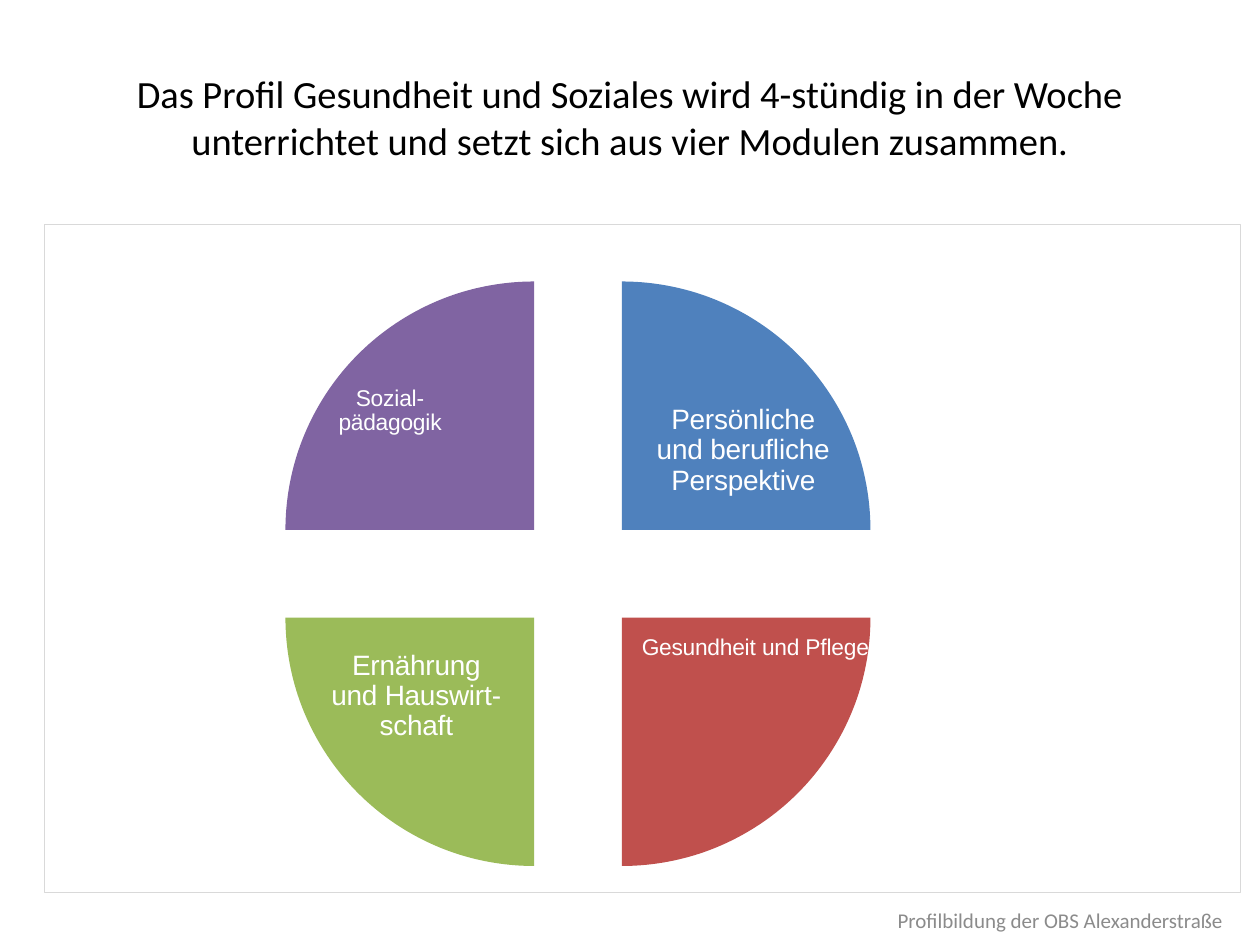
"""Build the slide about the four modules of the profile Gesundheit und Soziales."""
from dataclasses import dataclass

from lxml import etree
from pptx import Presentation
from pptx.chart.data import CategoryChartData
from pptx.dml.color import RGBColor
from pptx.enum.chart import XL_CHART_TYPE, XL_LABEL_POSITION
from pptx.enum.text import MSO_ANCHOR, PP_ALIGN
from pptx.oxml import parse_xml
from pptx.oxml.ns import nsdecls, qn
from pptx.util import Inches, Pt

PIE = XL_CHART_TYPE.PIE
LABEL_CENTER = XL_LABEL_POSITION.CENTER
MIDDLE = MSO_ANCHOR.MIDDLE
CENTER = PP_ALIGN.CENTER
TITLE_ONLY = 5
WIDTH, HEIGHT = Inches(10), Inches(7.5)
EXPLOSION = 25


@dataclass(frozen=True)
class Theme:
    """Colours, fonts and type sizes of the slide."""
    ink: str = "000000"
    paper: str = "FFFFFF"
    muted: str = "8B8B8B"
    border: str = "D9D9D9"
    text_font: str = "Calibri"
    chart_font: str = "Arial"
    title: int = 22
    footer: int = 12
    chart: int = 10
    label_large: int = 16
    label_small: int = 13


@dataclass(frozen=True)
class Area:
    """A rectangle in shares of its parent."""
    left: float
    top: float
    width: float
    height: float

    def on_slide(self) -> tuple[int, int, int, int]:
        """Return the rectangle in slide lengths."""
        return (int(self.left * WIDTH), int(self.top * HEIGHT),
                int(self.width * WIDTH), int(self.height * HEIGHT))


@dataclass(frozen=True)
class Module:
    """A quarter of the pie with its label lines and label shift."""
    lines: tuple[str, ...]
    color: str
    size: int
    shift: tuple[float, float]


THEME = Theme()
TITLE_AREA = Area(0.05, 0.04, 0.9, 0.167)
CHART_AREA = Area(0.035, 0.237, 0.95, 0.708)
FOOTER_AREA = Area(0.683, 0.947, 0.317, 0.053)
PLOT_AREA = Area(0.186, 0.058, 0.52, 0.93)
MODULES = (
    Module(("Persönliche", "und berufliche", "Perspektive"), "4F81BD", THEME.label_large, (0.028, 0.012)),
    Module(("Gesundheit und Pflege",), "C0504D", THEME.label_small, (0.038, -0.085)),
    Module(("Ernährung", "und Hauswirt-", "schaft"), "9BBB59", THEME.label_large, (-0.025, -0.015)),
    Module(("Sozial-", "pädagogik"), "8064A2", THEME.label_small, (-0.047, -0.046)),
)


def format_font(font, name: str, size: int, color: str) -> None:
    """Set typeface, size and colour of a font."""
    font.name = name
    font.size = Pt(size)
    font.bold = False
    font.color.rgb = RGBColor.from_string(color)


def write_text(shape, area: Area, text: str, size: int, color: str) -> None:
    """Place a text shape and write one centred paragraph in it."""
    shape.left, shape.top, shape.width, shape.height = area.on_slide()
    frame = shape.text_frame
    frame.word_wrap = True
    frame.vertical_anchor = MIDDLE
    paragraph = frame.paragraphs[0]
    paragraph.alignment = CENTER
    run = paragraph.add_run()
    run.text = text
    format_font(run.font, THEME.text_font, size, color)


def manual_layout(**values) -> etree._Element:
    """Return a manual chart layout."""
    settings = "".join(f'<c:{key} val="{value}"/>' for key, value in values.items())
    return parse_xml(f'<c:layout {nsdecls("c")}><c:manualLayout>{settings}</c:manualLayout></c:layout>')


def area_format(line: str) -> etree._Element:
    """Return a white chart area format with the given line."""
    return parse_xml(
        f'<c:spPr {nsdecls("c", "a")}><a:solidFill><a:srgbClr val="{THEME.paper}"/></a:solidFill>'
        f'{line}</c:spPr>')


def draw_module(series, index: int, module: Module) -> None:
    """Colour a quarter of the pie and write its label."""
    point = series.points[index]
    point.format.fill.solid()
    point.format.fill.fore_color.rgb = RGBColor.from_string(module.color)
    point.format.line.fill.background()
    label = point.data_label
    frame = label.text_frame
    for number, line in enumerate(module.lines):
        paragraph = frame.add_paragraph() if number else frame.paragraphs[0]
        run = paragraph.add_run()
        run.text = line
        format_font(run.font, THEME.chart_font, module.size, THEME.paper)
    label.position = LABEL_CENTER


def draw_pie(slide) -> None:
    """Add the exploded pie of the four modules."""
    data = CategoryChartData()
    data.categories = [str(number) for number in range(1, len(MODULES) + 1)]
    data.add_series("Series 1", [100 // len(MODULES)] * len(MODULES))
    chart = slide.shapes.add_chart(PIE, *CHART_AREA.on_slide(), data).chart
    chart.has_title = False
    chart.has_legend = False
    format_font(chart.font, THEME.chart_font, THEME.chart, THEME.ink)
    series = chart.plots[0].series[0]
    for index, module in enumerate(MODULES):
        draw_module(series, index, module)

    chart_space = chart._chartSpace
    for module, label in zip(MODULES, chart_space.iter(qn("c:dLbl"))):
        for layout in label.findall(qn("c:layout")):
            label.remove(layout)
        label.find(qn("c:idx")).addnext(manual_layout(x=module.shift[0], y=module.shift[1]))
    next(chart_space.iter(qn("c:dPt"))).addprevious(
        parse_xml(f'<c:explosion {nsdecls("c")} val="{EXPLOSION}"/>'))

    plot_area = next(chart_space.iter(qn("c:plotArea")))
    for layout in plot_area.findall(qn("c:layout")):
        plot_area.remove(layout)
    plot_area.insert(0, manual_layout(
        layoutTarget="inner", xMode="edge", yMode="edge",
        x=PLOT_AREA.left, y=PLOT_AREA.top, w=PLOT_AREA.width, h=PLOT_AREA.height))
    plot_area.append(area_format("<a:ln><a:noFill/></a:ln>"))
    chart_space.find(qn("c:chart")).addnext(area_format(
        f'<a:ln w="{Pt(0.75)}"><a:solidFill><a:srgbClr val="{THEME.border}"/></a:solidFill></a:ln>'))


def main() -> None:
    """Build and save the presentation."""
    presentation = Presentation()
    presentation.slide_width, presentation.slide_height = WIDTH, HEIGHT
    slide = presentation.slides.add_slide(presentation.slide_layouts[TITLE_ONLY])
    write_text(slide.shapes.title, TITLE_AREA,
               "Das Profil Gesundheit und Soziales wird 4-stündig in der Woche "
               "unterrichtet und setzt sich aus vier Modulen zusammen.",
               THEME.title, THEME.ink)
    draw_pie(slide)
    write_text(slide.shapes.add_textbox(*FOOTER_AREA.on_slide()), FOOTER_AREA,
               "Profilbildung der OBS Alexanderstraße", THEME.footer, THEME.muted)
    presentation.save("out.pptx")


if __name__ == "__main__":
    main()
